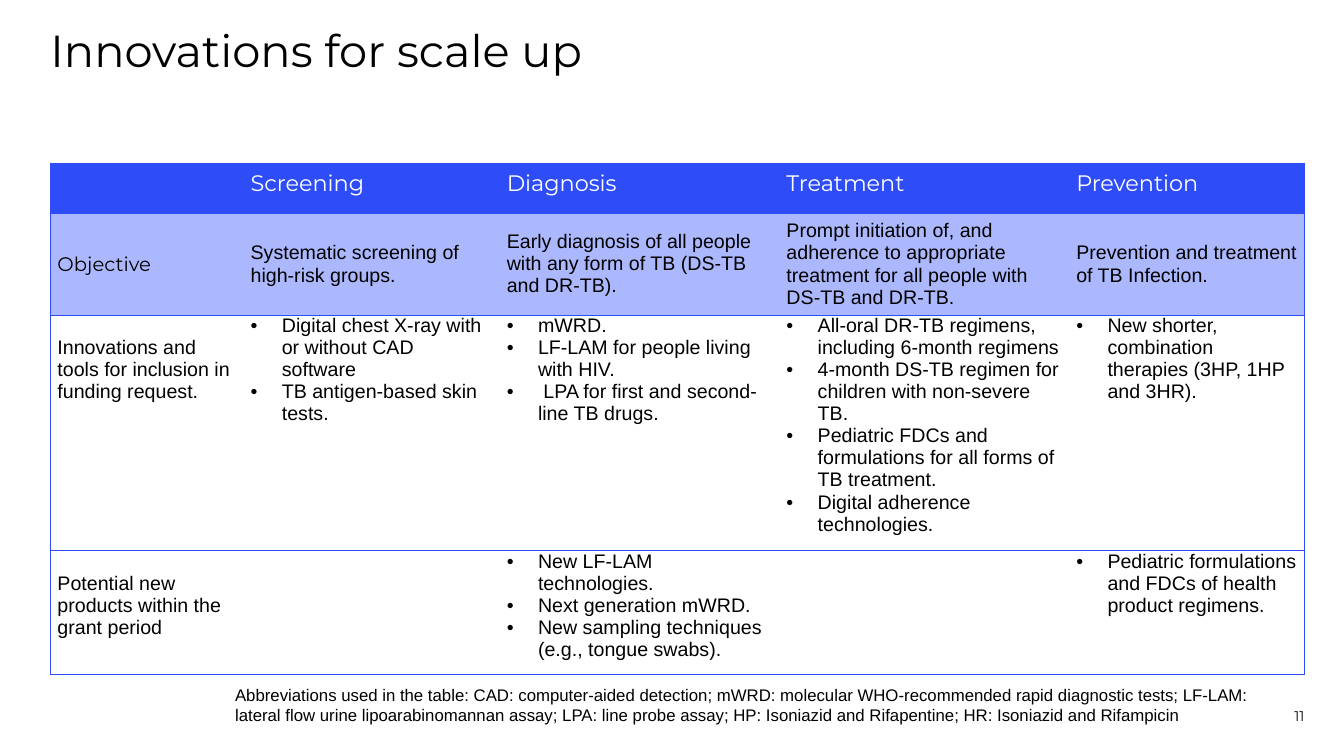
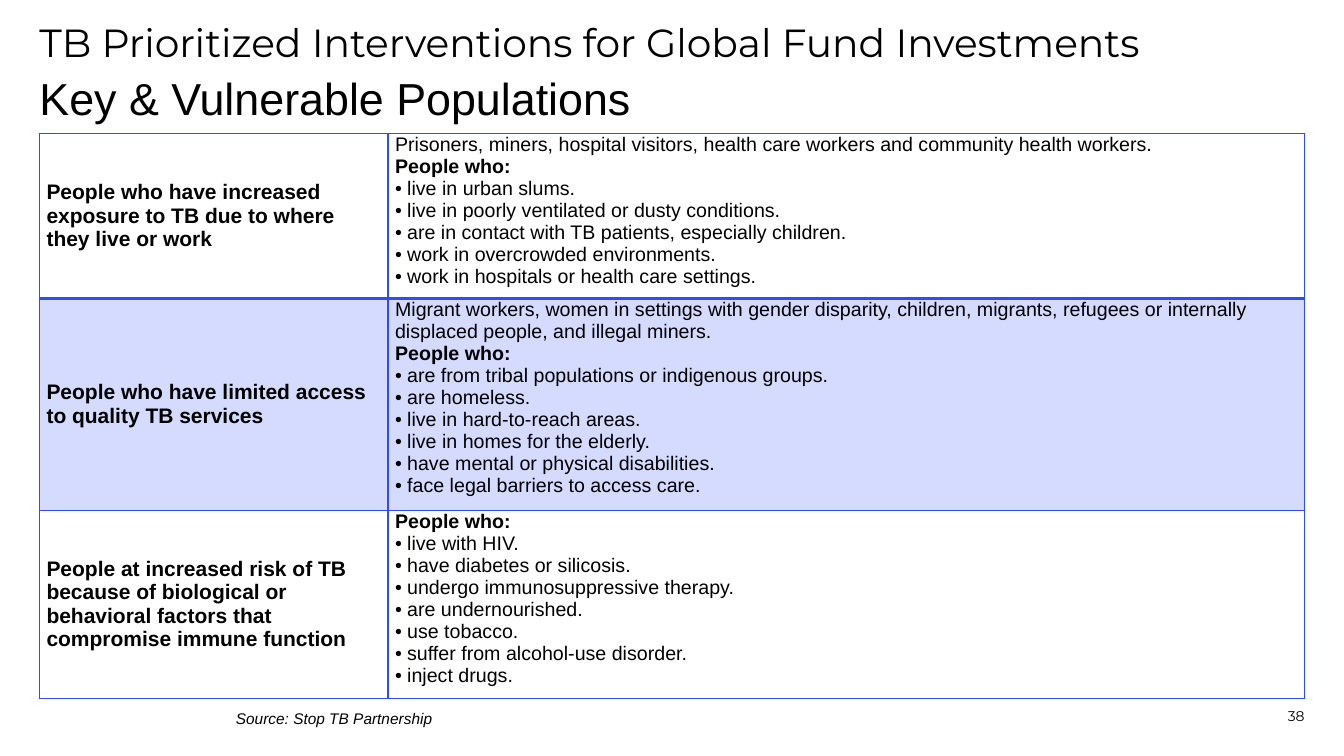
import lxml.etree
import pptx
import pptx.dml.color
import pptx.enum.text
import pptx.oxml.ns
import pptx.util

BLUE = pptx.dml.color.RGBColor(0x2E, 0x4D, 0xF9)
MID = pptx.dml.color.RGBColor(0xAB, 0xB8, 0xFD)
PALE = pptx.dml.color.RGBColor(0xD5, 0xDB, 0xFE)
WHITE = pptx.dml.color.RGBColor(0xFF, 0xFF, 0xFF)
BLACK = pptx.dml.color.RGBColor(0, 0, 0)
HEAD = "Montserrat"
BODY = "Arial"
WIDTH = pptx.util.Inches(13.333)
HEIGHT = pptx.util.Inches(7.5)
COLS, ROWS = 160, 90
RIGHT = 155.3
PLAIN = "{2D5ABB26-0587-4C30-8999-92F81FD0307C}"
MIDDLE = pptx.enum.text.MSO_ANCHOR.MIDDLE
TOP = pptx.enum.text.MSO_ANCHOR.TOP

HEADS = ["", "Screening", "Diagnosis", "Treatment", "Prevention"]
GOALS = [
    "Objective",
    "Systematic screening of high-risk groups.",
    "Early diagnosis of all people with any form of TB (DS-TB and DR-TB).",
    "Prompt initiation of, and adherence to appropriate treatment for all people with DS-TB and DR-TB.",
    "Prevention and treatment of TB Infection.",
]
TOOLS = [
    ("Innovations and tools for inclusion in funding request.", [
        ["Digital chest X-ray with or without CAD software", "TB antigen-based skin tests."],
        ["mWRD.", "LF-LAM for people living with HIV.", " LPA for first and second-line TB drugs."],
        ["All-oral DR-TB regimens, including 6-month regimens",
         "4-month DS-TB regimen for children with non-severe TB.",
         "Pediatric FDCs and formulations for all forms of TB treatment.",
         "Digital adherence technologies."],
        ["New shorter, combination therapies (3HP, 1HP and 3HR)."],
    ]),
    ("Potential new products within the grant period", [
        [],
        ["New LF-LAM technologies.", "Next generation mWRD.",
         "New sampling techniques (e.g., tongue swabs)."],
        [],
        ["Pediatric formulations and FDCs of health product regimens."],
    ]),
]
NOTE = ("Abbreviations used in the table: CAD: computer-aided detection; mWRD: molecular WHO-recommended "
        "rapid diagnostic tests; LF-LAM: lateral flow urine lipoarabinomannan assay; LPA: line probe assay; "
        "HP: Isoniazid and Rifapentine; HR: Isoniazid and Rifampicin")
GROUPS = [
    ("People who have increased exposure to TB due to where they live or work",
     "Prisoners, miners, hospital visitors, health care workers and community health workers.",
     ["live in urban slums.", "live in poorly ventilated or dusty conditions.",
      "are in contact with TB patients, especially children.",
      "work in overcrowded environments.", "work in hospitals or health care settings."]),
    ("People who have limited access to quality TB services",
     "Migrant workers, women in settings with gender disparity, children, migrants, refugees or "
     "internally displaced people, and illegal miners.",
     ["are from tribal populations or indigenous groups.", "are homeless.",
      "live in hard-to-reach areas.", "live in homes for the elderly.",
      "have mental or physical disabilities.", "face legal barriers to access care."]),
    ("People at increased risk of TB because of biological or behavioral factors that compromise "
     "immune function",
     "",
     ["live with HIV.", "have diabetes or silicosis.", "undergo immunosuppressive therapy.",
      "are undernourished.", "use tobacco.", "suffer from alcohol-use disorder.", "inject drugs."]),
]


def across(count):
    return round(WIDTH * count / COLS)


def down(count):
    return round(HEIGHT * count / ROWS)


def add_node(parent, tag, **attrs):
    return lxml.etree.SubElement(parent, pptx.oxml.ns.qn(tag), **attrs)


def write(frame, text, size, face=BODY, color=BLACK, bold=False, italic=False, dent=0, lead=None):
    par = frame.add_paragraph() if frame.text else frame.paragraphs[0]
    if lead:
        par.line_spacing = lead
    if dent:
        props = par._p.get_or_add_pPr()
        inset = pptx.util.Inches(dent)
        props.set("marL", str(inset))
        props.set("indent", str(-inset))
        add_node(props, "a:buFont", typeface=BODY)
        add_node(props, "a:buChar", char="•")
    run = par.add_run()
    run.text = text
    font = run.font
    font.size = pptx.util.Pt(size)
    font.name = face
    font.bold = bold
    font.italic = italic
    font.color.rgb = color
    return par


def add_box(slide, left, top, width, height, flush=False):
    box = slide.shapes.add_textbox(across(left), down(top), across(width), down(height))
    frame = box.text_frame
    frame.word_wrap = True
    if flush:
        frame.margin_left = frame.margin_right = frame.margin_top = frame.margin_bottom = 0
    return frame


def add_title(slide, left, top, text, size, face=HEAD):
    frame = add_box(slide, left, top, RIGHT - left, 6.1, flush=True)
    write(frame, text, size, face, lead=0.9)


def add_page(slide, number):
    frame = add_box(slide, RIGHT - 11.8, 81.4, 11.8, 4.8, flush=True)
    frame.vertical_anchor = pptx.enum.text.MSO_ANCHOR.BOTTOM
    par = write(frame, number, 10, HEAD)
    par.alignment = pptx.enum.text.PP_ALIGN.RIGHT


def add_grid(slide, left, top, widths, heights):
    frame = slide.shapes.add_table(len(heights), len(widths), across(left), down(top),
                                   across(sum(widths)), down(sum(heights)))
    table = frame.table
    table.first_row = table.horz_banding = False
    table._tbl.tblPr.find(pptx.oxml.ns.qn("a:tableStyleId")).text = PLAIN
    for column, width in zip(table.columns, widths):
        column.width = across(width)
    for row, height in zip(table.rows, heights):
        row.height = down(height)
    return table


def dress(cell, fill, edges, anchor=TOP, drop=0):
    props = cell._tc.get_or_add_tcPr()
    for side in "LRTB":
        points = edges.get(side, 0)
        line = add_node(props, "a:ln" + side, w=str(pptx.util.Pt(points)))
        if points:
            paint = add_node(line, "a:solidFill")
            add_node(paint, "a:srgbClr", val=str(BLUE))
        else:
            add_node(line, "a:noFill")
    cell.fill.solid()
    cell.fill.fore_color.rgb = fill
    cell.margin_left = cell.margin_right = pptx.util.Inches(0.07)
    cell.margin_top = pptx.util.Inches(drop)
    cell.margin_bottom = 0
    cell.vertical_anchor = anchor
    return cell.text_frame


def build_tools(slide):
    add_title(slide, 6, 3.4, "Innovations for scale up", 32)
    table = add_grid(slide, 6, 19.4, [23, 30.5, 33.3, 34.5, 28], [6, 12.1, 26.3, 14.8])
    last = len(HEADS) - 1
    for col in range(len(HEADS)):
        edges = {"T": 0.5, "B": 0.5, "L": 0.5 * (col == 0), "R": 0.5 * (col == last)}
        frame = dress(table.cell(0, col), BLUE, edges, drop=0.17)
        if HEADS[col]:
            write(frame, HEADS[col], 16, HEAD, WHITE, lead=pptx.util.Pt(12))
        frame = dress(table.cell(1, col), MID, edges, MIDDLE)
        write(frame, GOALS[col], 14, BODY if col else HEAD)
        for row, (label, lists) in enumerate(TOOLS, 2):
            frame = dress(table.cell(row, col), WHITE, edges, drop=0 if col else 0.22)
            if col == 0:
                write(frame, label, 14)
                continue
            for item in lists[col - 1]:
                write(frame, item, 14, dent=0.31)
    write(add_box(slide, 26.8, 80.9, 126.5, 6), NOTE, 12)
    add_page(slide, "11")


def build_groups(slide):
    add_title(slide, 4.7, 2.8, "TB Prioritized Interventions for Global Fund Investments", 28)
    add_title(slide, 4.7, 9.2, "Key & Vulnerable Populations", 32, BODY)
    table = add_grid(slide, 4.7, 15.9, [41.5, 109.1], [18.6, 23.6, 21])
    for row, (label, intro, items) in enumerate(GROUPS):
        fill = PALE if row == 1 else WHITE
        edges = {"L": 1, "R": 1, "T": 2 if row == 1 else 1, "B": 2 if row == 0 else 1}
        write(dress(table.cell(row, 0), fill, edges, MIDDLE), label, 15, bold=True)
        frame = dress(table.cell(row, 1), fill, edges)
        if intro:
            write(frame, intro, 14)
        write(frame, "People who:", 14, bold=True)
        for item in items:
            write(frame, item, 14, dent=0.12)
    write(add_box(slide, 26.9, 83.8, 53.2, 3.5), "Source: Stop TB Partnership", 11, italic=True)
    add_page(slide, "38")


def main():
    deck = pptx.Presentation()
    deck.slide_width = WIDTH
    deck.slide_height = HEIGHT
    for build in (build_tools, build_groups):
        build(deck.slides.add_slide(deck.slide_layouts[6]))
    deck.save("out.pptx")


if __name__ == "__main__":
    main()
